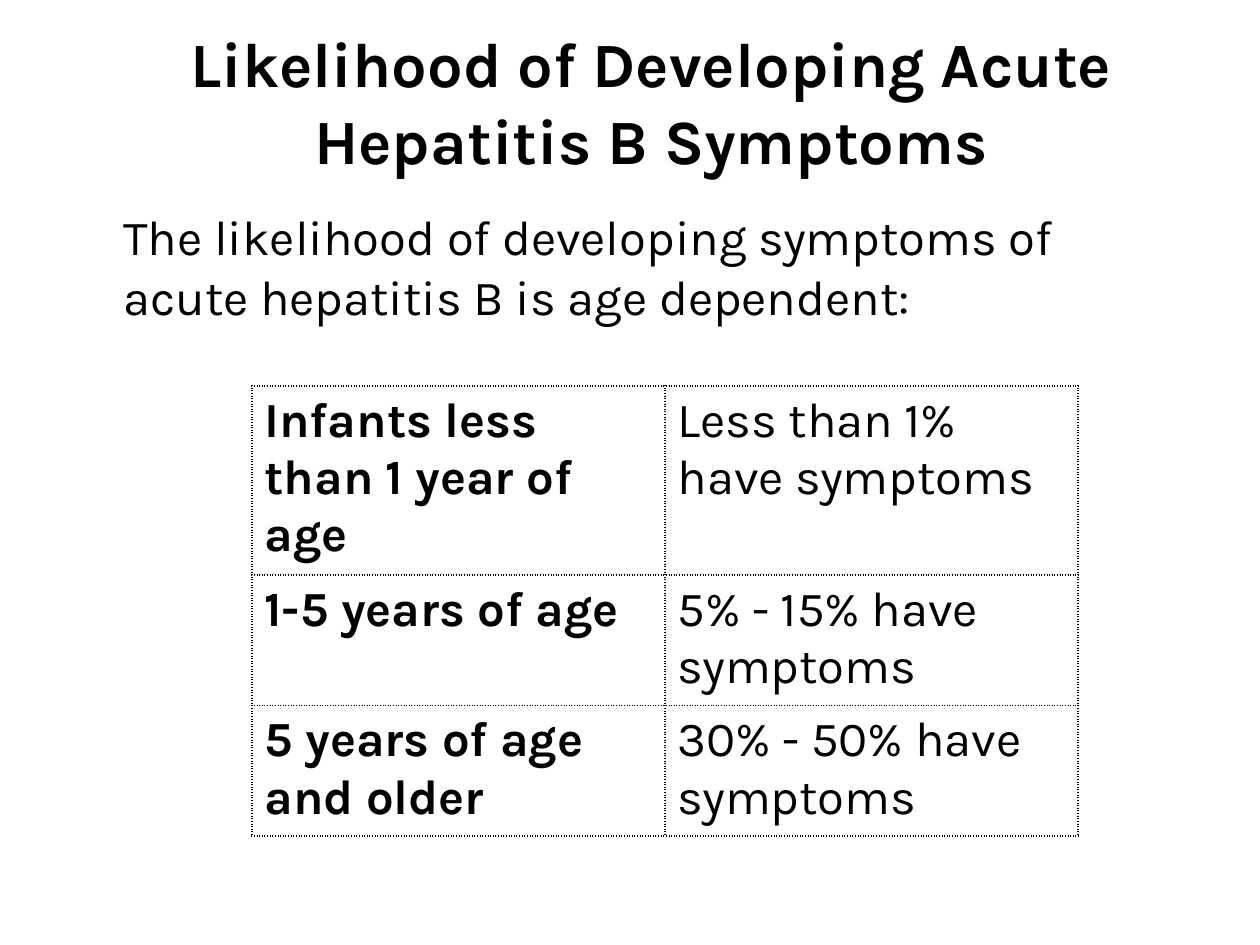
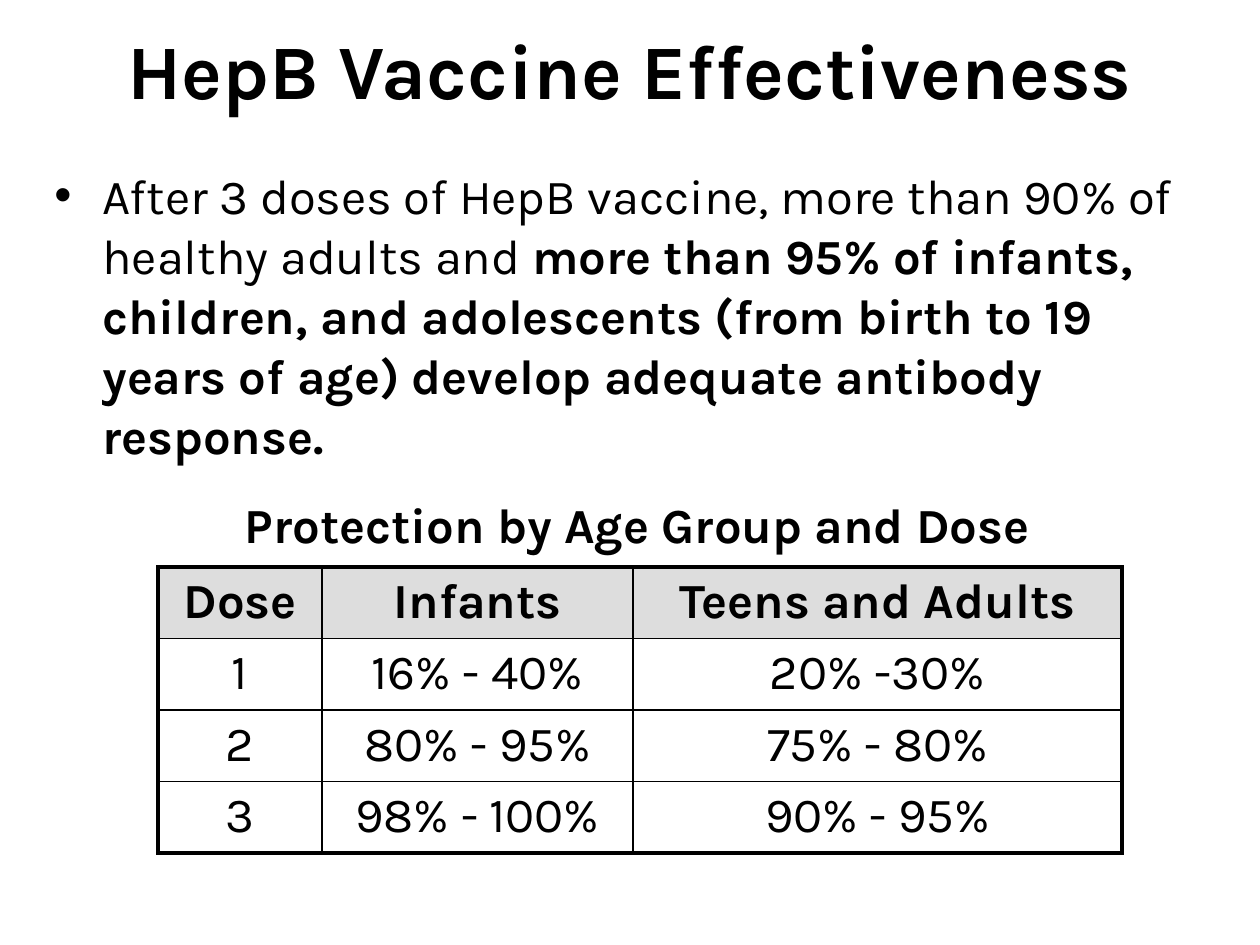
from lxml.etree import SubElement
from pptx import Presentation
from pptx.dml.color import RGBColor
from pptx.enum.text import MSO_ANCHOR, PP_ALIGN
from pptx.oxml.ns import qn
from pptx.util import Pt

# Shared style
EMU_PER_PX = 914400 / 126
FONT = "Karla"
BLACK = RGBColor(0x00, 0x00, 0x00)
WHITE = RGBColor(0xFF, 0xFF, 0xFF)
HEADER_GREY = RGBColor(0xDD, 0xDD, 0xDD)
BODY_SIZE = 28
LINE_SPACING = 1.02
INDENT = 48
THIN, THICK = 1, 2.25


def px(length):
    return round(length * EMU_PER_PX)


class Deck:
    def __init__(self, width, height):
        self.presentation = Presentation()
        self.presentation.slide_width = px(width)
        self.presentation.slide_height = px(height)
        self.slide = None

    def new_slide(self):
        self.slide = self.presentation.slides.add_slide(self.presentation.slide_layouts[6])

    def style_runs(self, paragraph, size, bold):
        for run in paragraph.runs:
            run.font.name = FONT
            run.font.size = Pt(size)
            run.font.bold = bold
            run.font.color.rgb = BLACK

    def text_box(self, left, top, width, height, anchor=MSO_ANCHOR.TOP):
        frame = self.slide.shapes.add_textbox(px(left), px(top), px(width), px(height)).text_frame
        frame.word_wrap = True
        frame.vertical_anchor = anchor
        return frame

    def title(self, text, left, top, width, height, size):
        frame = self.text_box(left, top, width, height, MSO_ANCHOR.MIDDLE)
        frame.text = text
        heading = frame.paragraphs[0]
        heading.alignment = PP_ALIGN.CENTER
        heading.line_spacing = LINE_SPACING
        self.style_runs(heading, size, True)

    def body(self, frame, text, emphasis="", bullet=False):
        """Fill the first paragraph, hung on the body indent."""
        statement = frame.paragraphs[0]
        statement.text = text
        statement.line_spacing = LINE_SPACING
        properties = statement._p.get_or_add_pPr()
        properties.set("marL", str(px(INDENT)))
        properties.set("indent", str(px(-INDENT if bullet else 0)))
        if bullet:
            SubElement(properties, qn("a:buFont"), typeface="Arial")
            SubElement(properties, qn("a:buChar"), char="•")
        self.style_runs(statement, BODY_SIZE, False)
        if emphasis:
            statement.add_run().text = emphasis
            self.style_runs(statement, BODY_SIZE, False)
            statement.runs[-1].font.bold = True

    def caption(self, frame, text, space_before):
        caption = frame.add_paragraph()
        caption.text = text
        caption.alignment = PP_ALIGN.CENTER
        caption.line_spacing = LINE_SPACING
        caption.space_before = Pt(space_before)
        self.style_runs(caption, BODY_SIZE, True)

    def border(self, cell, side, width, dash):
        line = SubElement(cell._tc.get_or_add_tcPr(), qn(f"a:ln{side}"), w=str(Pt(width)))
        colour = SubElement(line, qn("a:solidFill"))
        SubElement(colour, qn("a:srgbClr"), val=str(BLACK))
        SubElement(line, qn("a:prstDash"), val=dash)

    def table(self, rows, left, top, columns, height, align=PP_ALIGN.LEFT,
              header_row=False, header_column=False, outline=THIN, dash="solid"):
        grid = self.slide.shapes.add_table(
            len(rows), len(columns), px(left), px(top), px(sum(columns)), px(height)).table
        grid.first_row = grid.horz_banding = False
        for column, width in zip(grid.columns, columns):
            column.width = px(width)
        for r, row in enumerate(rows):
            for c, text in enumerate(row):
                cell = grid.cell(r, c)
                is_header = (header_row and r == 0) or (header_column and c == 0)
                on_edge = {"L": c == 0, "R": c == len(columns) - 1,
                           "T": r == 0, "B": r == len(rows) - 1}
                for side, outer in on_edge.items():
                    self.border(cell, side, outline if outer else THIN, dash)
                cell.fill.solid()
                cell.fill.fore_color.rgb = HEADER_GREY if header_row and r == 0 else WHITE
                cell.text_frame.text = text
                entry = cell.text_frame.paragraphs[0]
                entry.alignment = align
                self.style_runs(entry, BODY_SIZE, is_header)


def symptoms_slide(deck):
    deck.new_slide()
    deck.title("Likelihood of Developing Acute Hepatitis B Symptoms", 42, 32, 1218, 136, 36)
    introduction = deck.text_box(63, 199, 1070, 252)
    deck.body(introduction,
              "The likelihood of developing symptoms of acute hepatitis B is age dependent:")

    # Symptoms by age
    deck.table([
        ("Infants less than 1 year of age", "Less than 1% have symptoms"),
        ("1-5 years of age", "5% - 15% have symptoms"),
        ("5 years of age and older", "30% - 50% have symptoms"),
    ], 252, 386, (413, 413), 390, header_column=True, dash="sysDot")


def effectiveness_slide(deck):
    deck.new_slide()
    deck.title("HepB Vaccine Effectiveness", 0, 0, 1260, 136, 44)
    response = deck.text_box(42, 158, 1190, 624)
    deck.body(response,
              "After 3 doses of HepB vaccine, more than 90% of healthy adults and ",
              "more than 95% of infants, children, and adolescents (from birth to 19 "
              "years of age) develop adequate antibody response.", bullet=True)
    deck.caption(response, "Protection by Age Group and Dose", 17)

    # Protection by dose
    deck.table([
        ("Dose", "Infants", "Teens and Adults"),
        ("1", "16% - 40%", "20% -30%"),
        ("2", "80% - 95%", "75% - 80%"),
        ("3", "98% - 100%", "90% - 95%"),
    ], 158, 567, (164, 311, 489), 286, PP_ALIGN.CENTER, header_row=True, outline=THICK)


def main():
    deck = Deck(1260, 945)
    symptoms_slide(deck)
    effectiveness_slide(deck)
    deck.presentation.save("out.pptx")


if __name__ == "__main__":
    main()
